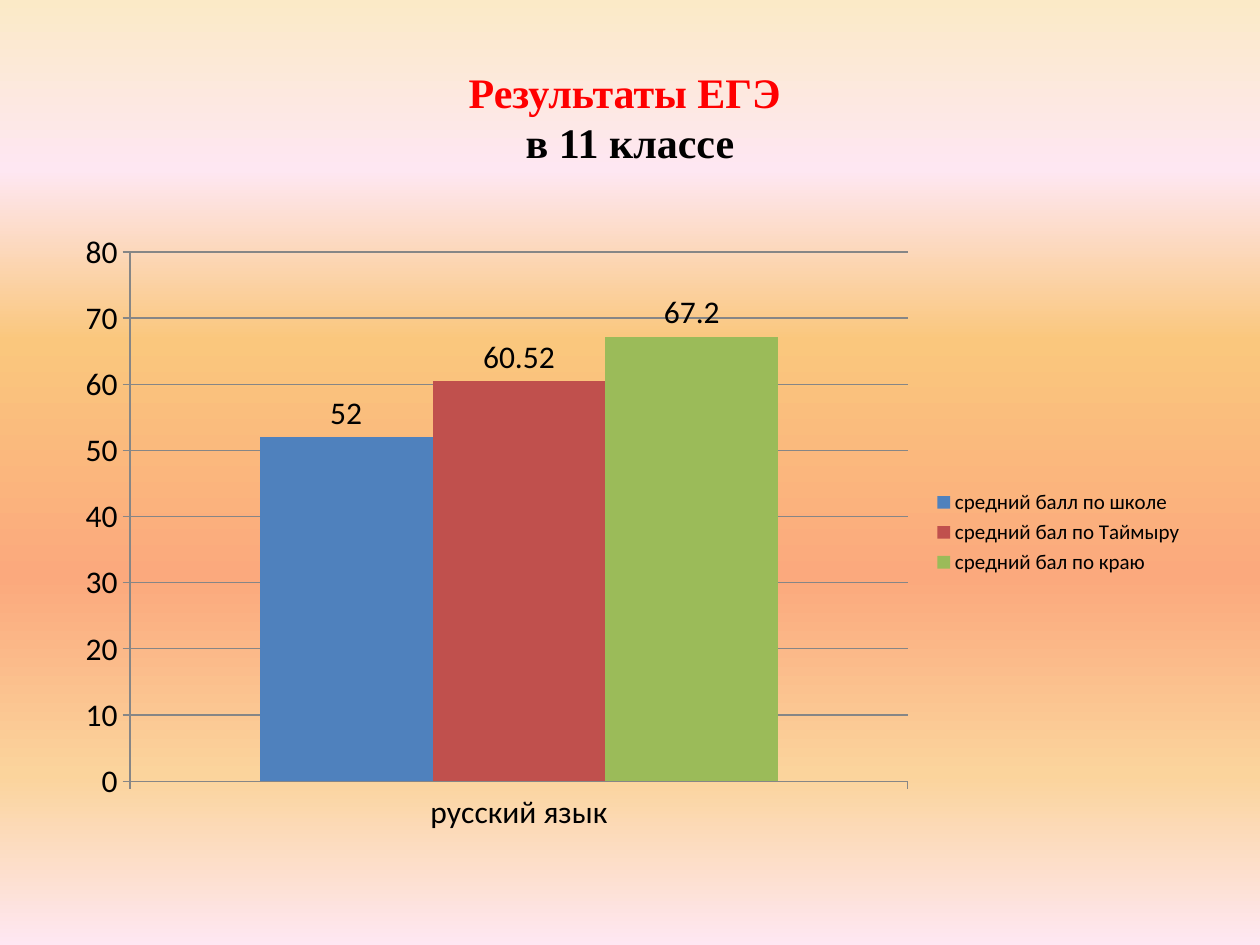
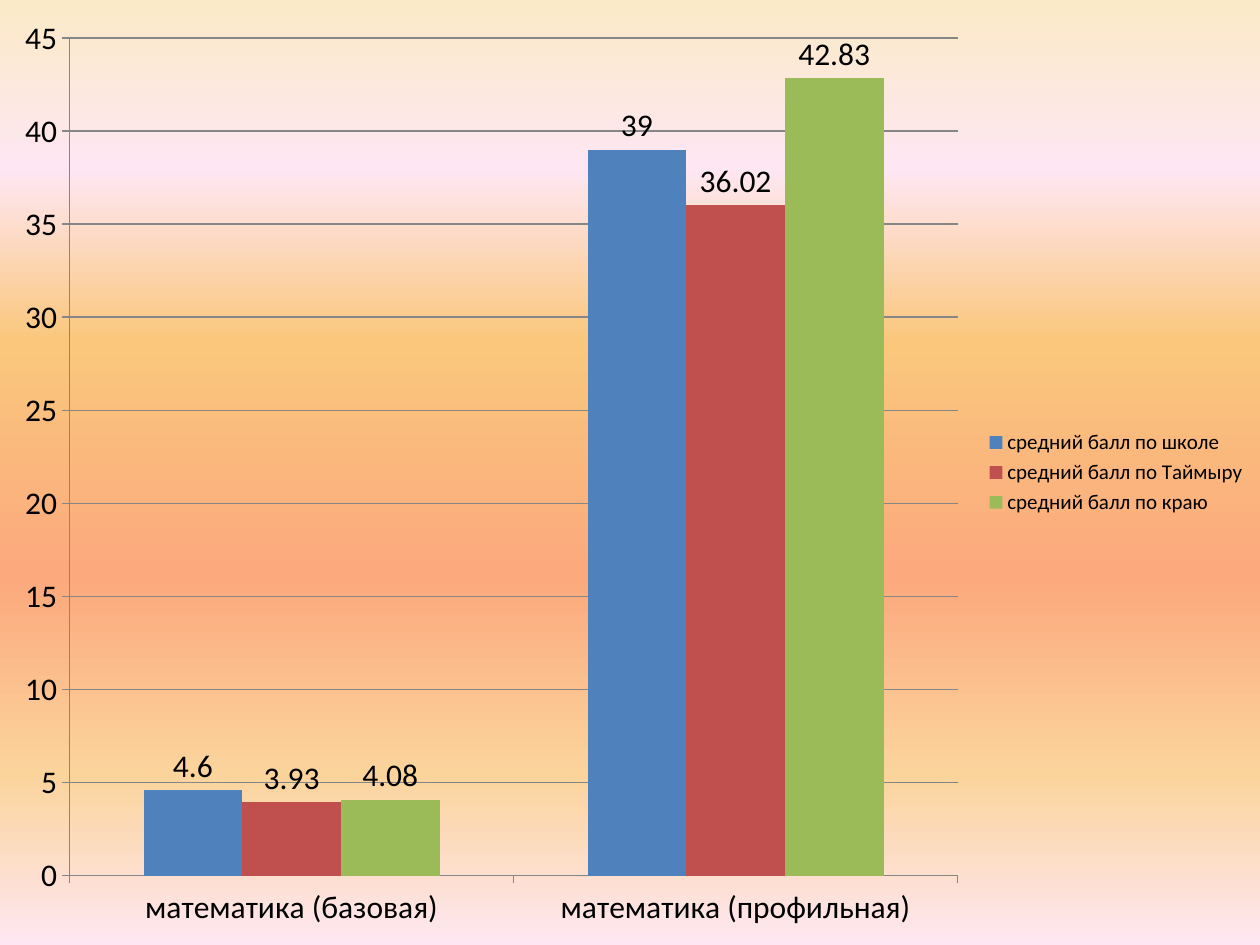
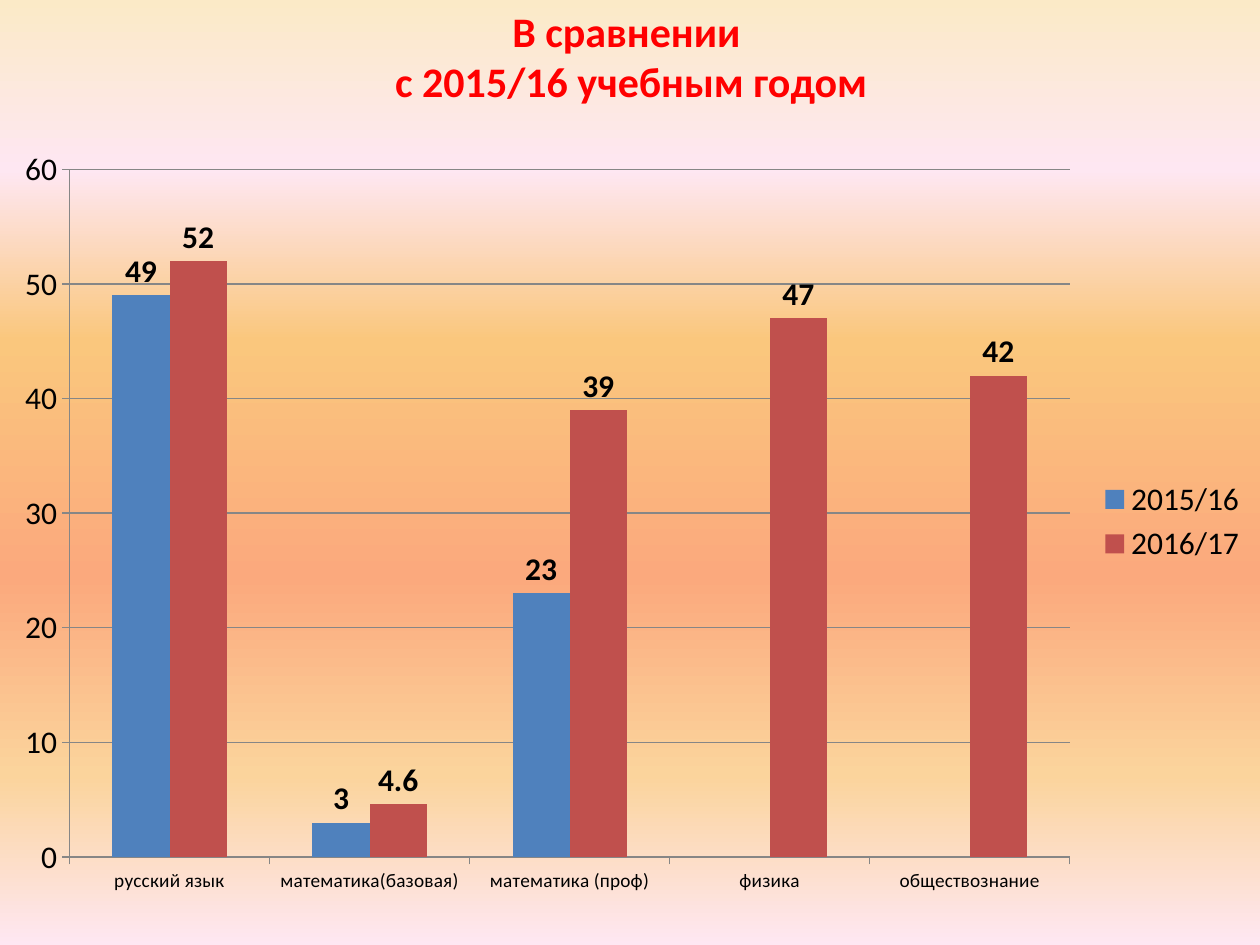
from dataclasses import dataclass
from lxml.etree import SubElement
from pptx import Presentation
from pptx.chart.data import CategoryChartData as Data
from pptx.dml.color import RGBColor as RGB
from pptx.enum.chart import XL_CHART_TYPE as Kind, XL_LABEL_POSITION as Spot
from pptx.enum.chart import XL_LEGEND_POSITION as Side, XL_TICK_MARK as Tick
from pptx.enum.text import MSO_ANCHOR as Anchor, MSO_AUTO_SIZE as Fit, PP_ALIGN as Align
from pptx.oxml.ns import qn
from pptx.util import Inches, Pt


@dataclass(frozen=True)
class Theme:
    ink: str = "000000"
    red: str = "FF0000"
    axis: str = "868686"
    bars: tuple = ("4F81BD", "C0504D", "9BBB59")
    sky: tuple = ((0, "FBEAC7"), (18, "FEE7F2"), (36, "FAC77D"),
                  (61, "FBA97D"), (82, "FBD49C"), (100, "FEE7F2"))
    sans: str = "Calibri"
    serif: str = "Times New Roman"
    head: int = 24
    body: int = 18
    small: int = 12
    tiny: int = 11


T = Theme()
WIDE, HIGH = 10, 7.5

# Boxes are left, top, width, height in inches
SLIDES = [
    {
        "title": {"box": (0.5, 0.3, 9, 1.25), "font": T.serif,
                  "lines": [("Результаты ЕГЭ ", T.red), ("в 11 классе", T.ink)]},
        "box": (0.5, 1.75, 9, 4.95),
        "cats": ["русский язык"],
        "rows": {"средний балл по школе": [52],
                 "средний бал по Таймыру": [60.52],
                 "средний бал по краю": [67.2]},
        "scale": (80, 10), "legend": T.small,
    },
    {
        "box": (0, 0, WIDE, HIGH),
        "cats": ["математика (базовая)", "математика (профильная)"],
        "rows": {"средний балл по школе": [4.6, 39],
                 "средний балл по Таймыру": [3.93, 36.02],
                 "средний балл по краю": [4.08, 42.83]},
        "scale": (45, 5), "legend": T.small,
    },
    {
        "title": {"box": (0.51, 0.04, 9, 0.8), "font": T.sans,
                  "lines": [("В сравнении ", T.red), ("с 2015/16 учебным годом", T.red)]},
        "box": (0, 1.07, WIDE, 6.14),
        "cats": ["русский язык", "математика(базовая)", "математика (проф)",
                 "физика", "обществознание"],
        "rows": {"2015/16": [49, 3, 23, None, None],
                 "2016/17": [52, 4.6, 39, 47, 42]},
        "scale": (60, 10), "cat": T.tiny, "bold": True,
    },
]


def put(obj, **vals):
    for key, val in vals.items():
        setattr(obj, key, val)


def style(font, size=T.body, name=T.sans, color=T.ink, bold=False):
    put(font, size=Pt(size), name=name, bold=bold)
    font.color.rgb = RGB.from_string(color)


def rule(line):
    line.color.rgb = RGB.from_string(T.axis)
    line.width = Pt(0.75)


def paint(master):
    """Give the master the gradient that every slide inherits."""
    fill = master.background.fill
    fill.gradient()
    fill.gradient_angle = 270
    stops = master.element.find(".//" + qn("a:gsLst"))
    stops[:] = []
    for pos, color in T.sky:
        stop = SubElement(stops, qn("a:gs"), pos=str(pos * 1000))
        SubElement(stop, qn("a:srgbClr"), val=color)


def add_title(slide, info):
    shape = slide.shapes.title
    put(shape, **dict(zip(("left", "top", "width", "height"), map(Inches, info["box"]))))
    frame = shape.text_frame
    put(frame, word_wrap=True, auto_size=Fit.NONE, vertical_anchor=Anchor.MIDDLE)
    para = frame.paragraphs[0]
    para.alignment = Align.CENTER
    for i, (text, color) in enumerate(info["lines"]):
        if i:
            para.add_line_break()
        run = para.add_run()
        run.text = text
        style(run.font, T.head, info["font"], color, True)


def add_bars(slide, info):
    data = Data()
    data.categories = info["cats"]
    for name, vals in info["rows"].items():
        data.add_series(name, vals)
    chart = slide.shapes.add_chart(
        Kind.COLUMN_CLUSTERED, *map(Inches, info["box"]), data).chart
    style(chart.font)
    put(chart, has_title=False, has_legend=True)
    put(chart.legend, position=Side.RIGHT, include_in_layout=False)
    style(chart.legend.font, info.get("legend", T.body))

    cat, val = chart.category_axis, chart.value_axis
    for axis, size in ((cat, info.get("cat", T.body)), (val, T.body)):
        put(axis, major_tick_mark=Tick.OUTSIDE, minor_tick_mark=Tick.NONE)
        style(axis.tick_labels.font, size)
        rule(axis.format.line)
    top, step = info["scale"]
    put(val, minimum_scale=0, maximum_scale=top, major_unit=step, has_major_gridlines=True)
    rule(val.major_gridlines.format.line)

    plot = chart.plots[0]
    put(plot, gap_width=150, overlap=0, vary_by_categories=False)
    for row, color in zip(plot.series, T.bars):
        row.format.fill.solid()
        row.format.fill.fore_color.rgb = RGB.from_string(color)
        labels = row.data_labels
        put(labels, show_value=True, position=Spot.OUTSIDE_END)
        style(labels.font, bold=info.get("bold", False))


def main():
    deck = Presentation()
    put(deck, slide_width=Inches(WIDE), slide_height=Inches(HIGH))
    paint(deck.slide_master)
    named, blank = deck.slide_layouts[5], deck.slide_layouts[6]
    for info in SLIDES:
        title = info.get("title")
        slide = deck.slides.add_slide(named if title else blank)
        if title:
            add_title(slide, title)
        add_bars(slide, info)
    deck.save("out.pptx")


if __name__ == "__main__":
    main()
